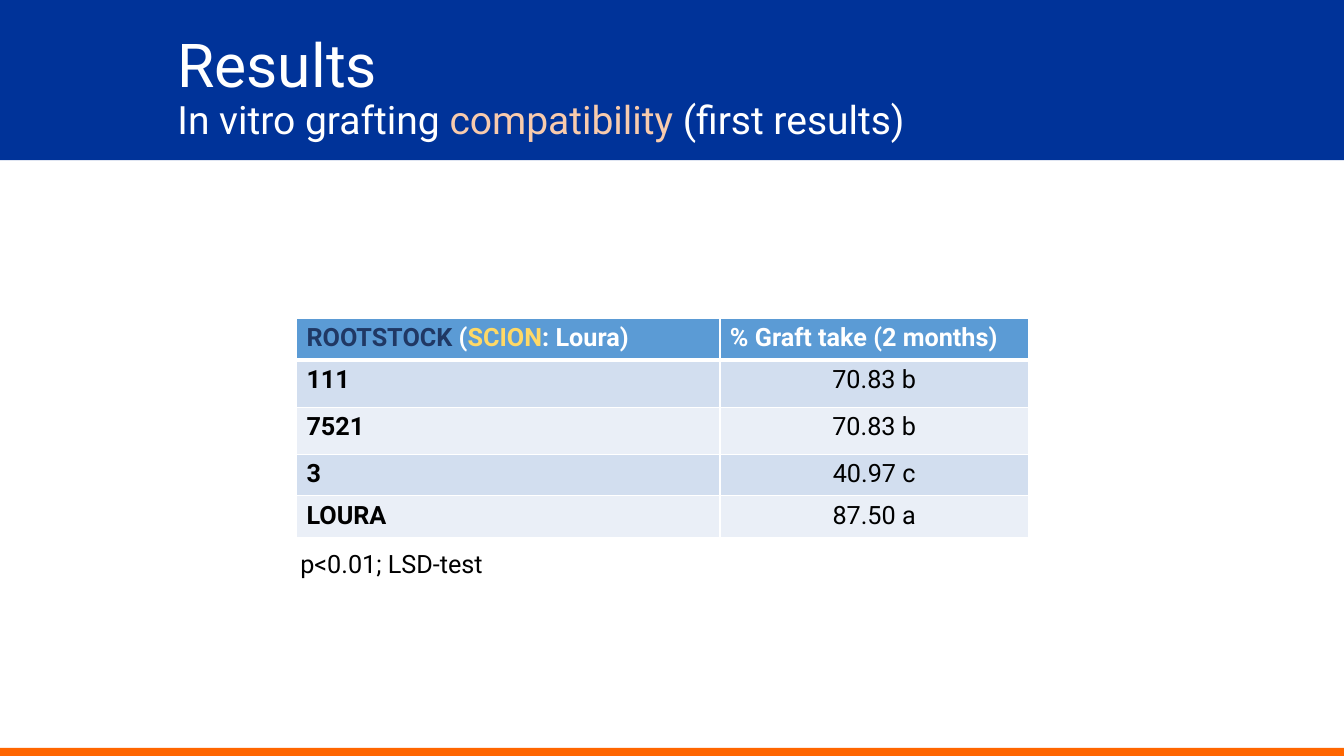
import pptx
import pptx.util
from lxml import etree
from pptx.dml.color import RGBColor
from pptx.enum.shapes import MSO_SHAPE
from pptx.enum.text import MSO_ANCHOR, MSO_AUTO_SIZE, PP_ALIGN
from pptx.oxml.ns import qn
from pptx.util import Inches

COLORS = {
    "white": "FFFFFF", "black": "000000", "blue": "003399", "orange": "FF6600",
    "peach": "F8CBAD", "navy": "203864", "gold": "FFD966",
    "header": "5B9BD5", "band_dark": "D2DEEF", "band_light": "EAEFF7",
}
FONT = "Roboto"
COLUMN_WIDTHS = (4.2, 3.06)
ROW_HEIGHTS = (0.41, 0.47, 0.47, 0.41, 0.41)
HEADER = (
    (("ROOTSTOCK", "navy"), (" (", "white"), ("SCION", "gold"), (": Loura)", "white")),
    (("% Graft take (2 months)", "white"),),
)
GRAFT_TAKE = (("111", "70.83 b"), ("7521", "70.83 b"), ("3", "40.97 c"), ("LOURA", "87.50 a"))


def rgb(color):
    return RGBColor.from_string(COLORS[color])


def add_run(paragraph, text, color, size, bold=False):
    run = paragraph.add_run()
    run.text = text
    style = {"name": FONT, "size": pptx.util.Pt(size), "bold": bold}
    for attribute, value in style.items():
        setattr(run.font, attribute, value)
    run.font.color.rgb = rgb(color)


def add_band(slide, top, height, color):
    band = slide.shapes.add_shape(MSO_SHAPE.RECTANGLE, 0, Inches(top), Inches(13.33), Inches(height))
    band.shadow.inherit = False
    band.fill.solid()
    band.fill.fore_color.rgb = rgb(color)
    band.line.fill.background()
    # Send behind the title
    slide.shapes._spTree.insert(2, band._element)


def add_title(slide):
    title = slide.shapes.title
    place = {"left": 1.66, "top": 0.39, "width": 9.44, "height": 0.98}
    for attribute, value in place.items():
        setattr(title, attribute, Inches(value))
    frame = title.text_frame
    layout = {"word_wrap": True, "auto_size": MSO_AUTO_SIZE.NONE, "vertical_anchor": MSO_ANCHOR.MIDDLE}
    for attribute, value in layout.items():
        setattr(frame, attribute, value)
    heading = frame.paragraphs[0]
    heading.alignment = PP_ALIGN.LEFT
    heading.line_spacing = 0.9
    add_run(heading, "Results", "white", 43.2)
    heading.add_line_break()
    for text, color in (("In vitro grafting ", "white"), ("compatibility", "peach"),
                        (" (first results)", "white")):
        add_run(heading, text, color, 27.9)


def set_borders(cell, top, bottom):
    properties = cell._tc.get_or_add_tcPr()
    widths = {"a:lnL": 1, "a:lnR": 1, "a:lnT": top, "a:lnB": bottom}
    for position, (tag, width) in enumerate(widths.items()):
        line = etree.Element(qn(tag), w=str(pptx.util.Pt(width)))
        fill = etree.SubElement(line, qn("a:solidFill"))
        etree.SubElement(fill, qn("a:srgbClr"), val=COLORS["white"])
        properties.insert(position, line)


def fill_cell(cell, runs, fill, bold, alignment=PP_ALIGN.LEFT):
    cell.fill.solid()
    cell.fill.fore_color.rgb = rgb(fill)
    paragraph = cell.text_frame.paragraphs[0]
    paragraph.alignment = alignment
    for text, color in runs:
        add_run(paragraph, text, color, 18, bold)


def add_graft_table(slide):
    table = slide.shapes.add_table(
        len(ROW_HEIGHTS), len(COLUMN_WIDTHS), Inches(2.94), Inches(3.16),
        Inches(sum(COLUMN_WIDTHS)), Inches(sum(ROW_HEIGHTS))).table
    for column, width in zip(table.columns, COLUMN_WIDTHS):
        column.width = Inches(width)
    for row, height in zip(table.rows, ROW_HEIGHTS):
        row.height = Inches(height)

    # Header row
    for column, runs in enumerate(HEADER):
        cell = table.cell(0, column)
        fill_cell(cell, runs, "header", True)
        set_borders(cell, 1, 3)

    # Rootstock rows
    for row, (rootstock, take) in enumerate(GRAFT_TAKE, start=1):
        band = "band_dark" if row % 2 else "band_light"
        fill_cell(table.cell(row, 0), [(rootstock, "black")], band, True)
        fill_cell(table.cell(row, 1), [(take, "black")], band, False, PP_ALIGN.CENTER)
        for column in range(len(COLUMN_WIDTHS)):
            set_borders(table.cell(row, column), 3 if row == 1 else 1, 1)


def add_note(slide):
    note = slide.shapes.add_textbox(Inches(2.88), Inches(5.39), Inches(6.62), Inches(0.4))
    note.text_frame.word_wrap = True
    add_run(note.text_frame.paragraphs[0], "p<0.01; LSD-test", "black", 18)


def main():
    deck = pptx.Presentation()
    deck.slide_width, deck.slide_height = Inches(13.33), Inches(7.5)
    slide = deck.slides.add_slide(deck.slide_layouts[5])

    # Header and footer bands
    add_band(slide, 0, 1.59, "blue")
    add_band(slide, 7.42, 0.08, "orange")

    # Content
    add_title(slide)
    add_graft_table(slide)
    add_note(slide)
    deck.save("out.pptx")


if __name__ == "__main__":
    main()
